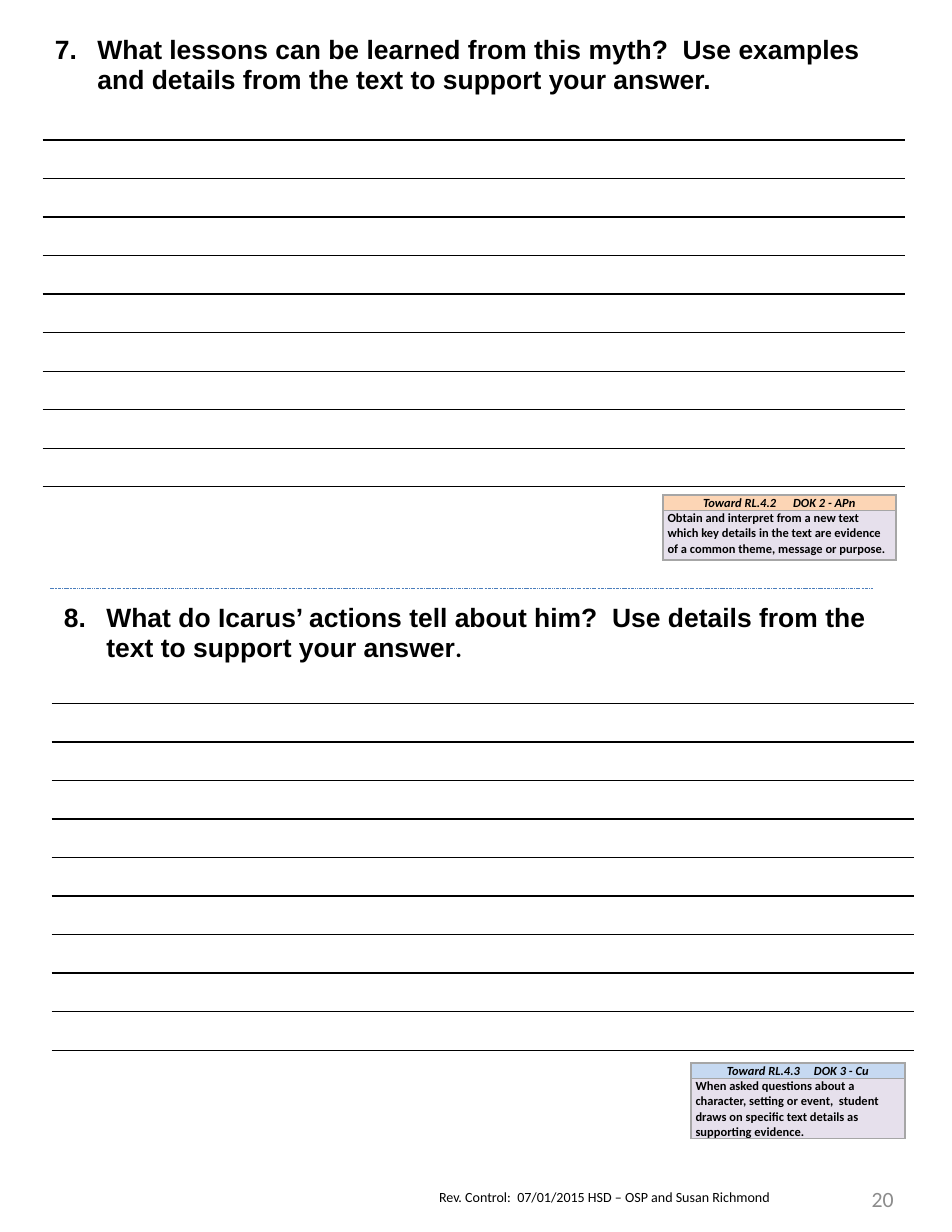
from lxml.etree import SubElement
from pptx import Presentation
from pptx.dml.color import RGBColor
from pptx.enum.dml import MSO_LINE
from pptx.enum.shapes import MSO_CONNECTOR
from pptx.enum.text import MSO_ANCHOR, PP_ALIGN
from pptx.oxml.ns import qn
from pptx.util import Inches, Pt

BLACK = RGBColor(0x00, 0x00, 0x00)
WHITE = RGBColor(0xFF, 0xFF, 0xFF)
PAGE_GRAY = RGBColor(0x8C, 0x8C, 0x8C)
BORDER_GRAY = RGBColor(0xA6, 0xA6, 0xA6)
DIVIDER_BLUE = RGBColor(0x4B, 0x7E, 0xBC)
PEACH = RGBColor(0xFC, 0xD5, 0xB5)
LIGHT_BLUE = RGBColor(0xC6, 0xD9, 0xF1)
LAVENDER = RGBColor(0xE6, 0xE0, 0xEC)

ANSWER_LINES = 9
LINE_GAP = 3.1 / ANSWER_LINES


def set_font(font, size, color=BLACK, name="Calibri", bold=False, italic=False):
    font.name, font.size = name, Pt(size)
    font.bold, font.italic = bold, italic
    font.color.rgb = color


def format_cell(cell, fill, color, sides, margins):
    """Draw 1 pt borders on the given sides, hide the others, then fill."""
    cell.margin_left = cell.margin_right = Inches(margins[0])
    cell.margin_top = cell.margin_bottom = Inches(margins[1])
    properties = cell._tc.get_or_add_tcPr()
    for side in "LRTB":
        border = SubElement(properties, qn(f"a:ln{side}"), w=str(Pt(1)))
        if side in sides:
            solid = SubElement(border, qn("a:solidFill"))
            SubElement(solid, qn("a:srgbClr"), val=str(color))
        else:
            SubElement(border, qn("a:noFill"))
    cell.fill.solid()
    cell.fill.fore_color.rgb = fill


def add_column_table(slide, left, top, width, heights):
    table = slide.shapes.add_table(
        len(heights), 1, Inches(left), Inches(top), Inches(width), Inches(sum(heights))
    ).table
    table.first_row = table.horz_banding = False
    for row, height in zip(table.rows, heights):
        row.height = Inches(height)
    return table


def number_paragraph(paragraph, number):
    properties = paragraph._p.get_or_add_pPr()
    properties.set("marL", str(Inches(0.38)))
    properties.set("indent", str(-Inches(0.38)))
    SubElement(properties, qn("a:buFont"), typeface="+mj-lt")
    SubElement(properties, qn("a:buAutoNum"), type="arabicPeriod", startAt=str(number))


def add_question(slide, left, top, prompt_height, number, runs):
    """Numbered prompt above evenly ruled answer lines."""
    heights = [prompt_height] + [LINE_GAP] * ANSWER_LINES
    table = add_column_table(slide, left, top, 7.7, heights)
    prompt, *answers = [row.cells[0] for row in table.rows]
    format_cell(prompt, WHITE, BLACK, "B", (0.11, 0.06))
    for answer in answers:
        format_cell(answer, WHITE, BLACK, "TB", (0.11, 0))

    paragraph = prompt.text_frame.paragraphs[0]
    number_paragraph(paragraph, number)
    for text, size, font_name in runs:
        run = paragraph.add_run()
        run.text = text
        set_font(run.font, size, name=font_name, bold=True)


def add_standard(slide, left, top, width, heights, heading, goal, heading_fill):
    """Small two-row box naming the standard and its goal."""
    table = add_column_table(slide, left, top, width, heights)
    for row, text, fill in zip(table.rows, (heading, goal), (heading_fill, LAVENDER)):
        cell = row.cells[0]
        format_cell(cell, fill, BORDER_GRAY, "LRTB", (0.04, 0))
        cell.text = text
        set_font(cell.text_frame.paragraphs[0].font, 8, bold=True, italic=text == heading)
    heading_cell = table.cell(0, 0)
    heading_cell.vertical_anchor = MSO_ANCHOR.MIDDLE
    heading_cell.text_frame.paragraphs[0].alignment = PP_ALIGN.CENTER


def add_label(slide, left, top, width, height, text, size, color, align, anchor):
    frame = slide.shapes.add_textbox(
        Inches(left), Inches(top), Inches(width), Inches(height)
    ).text_frame
    frame.word_wrap = True
    frame.vertical_anchor = anchor
    frame.margin_left = frame.margin_right = Inches(0.11)
    paragraph = frame.paragraphs[0]
    paragraph.text = text
    paragraph.alignment = align
    set_font(paragraph.font, size, color)


def add_divider(slide, left, right, y):
    divider = slide.shapes.add_connector(
        MSO_CONNECTOR.STRAIGHT, Inches(left), Inches(y), Inches(right), Inches(y)
    )
    divider.line.color.rgb = DIVIDER_BLUE
    divider.line.width = Pt(0.25)
    divider.line.dash_style = MSO_LINE.DASH_DOT_DOT
    SubElement(divider._element.spPr, qn("a:effectLst"))


def main():
    presentation = Presentation()
    presentation.slide_width = Inches(8.5)
    presentation.slide_height = Inches(11)
    slide = presentation.slides.add_slide(presentation.slide_layouts[6])

    # Footer
    add_label(slide, 3.81, 10.56, 4.25, 0.26,
              "Rev. Control:  07/01/2015 HSD – OSP and Susan Richmond",
              9, BLACK, PP_ALIGN.LEFT, MSO_ANCHOR.TOP)
    add_label(slide, 7.17, 10.41, 0.92, 0.59, "20",
              14, PAGE_GRAY, PP_ALIGN.RIGHT, MSO_ANCHOR.MIDDLE)

    # Questions with answer lines
    add_question(slide, 0.38, 0.26, 0.99, 7, [
        ("What lessons can be learned from this myth?  Use examples and details "
         "from the text to support your answer.", 17, "Arial"),
    ])
    add_question(slide, 0.46, 5.33, 0.95, 8, [
        ("What do Icarus’ actions tell about him?  Use details from the text "
         "to support your answer", 17, "Arial"),
        (".", 16, "Calibri"),
    ])
    add_divider(slide, 0.45, 7.79, 5.25)

    # Standards
    add_standard(slide, 5.92, 4.42, 2.08, (0.14, 0.44),
                 "Toward RL.4.2      DOK 2 - APn",
                 "Obtain and interpret from a new text which key details in the text "
                 "are evidence of a common theme, message or purpose.", PEACH)
    add_standard(slide, 6.17, 9.49, 1.91, (0.14, 0.53),
                 "Toward RL.4.3     DOK 3 - Cu",
                 "When asked questions about a character, setting or event,  student "
                 "draws on specific text details as supporting evidence.", LIGHT_BLUE)

    presentation.save("out.pptx")


if __name__ == "__main__":
    main()
